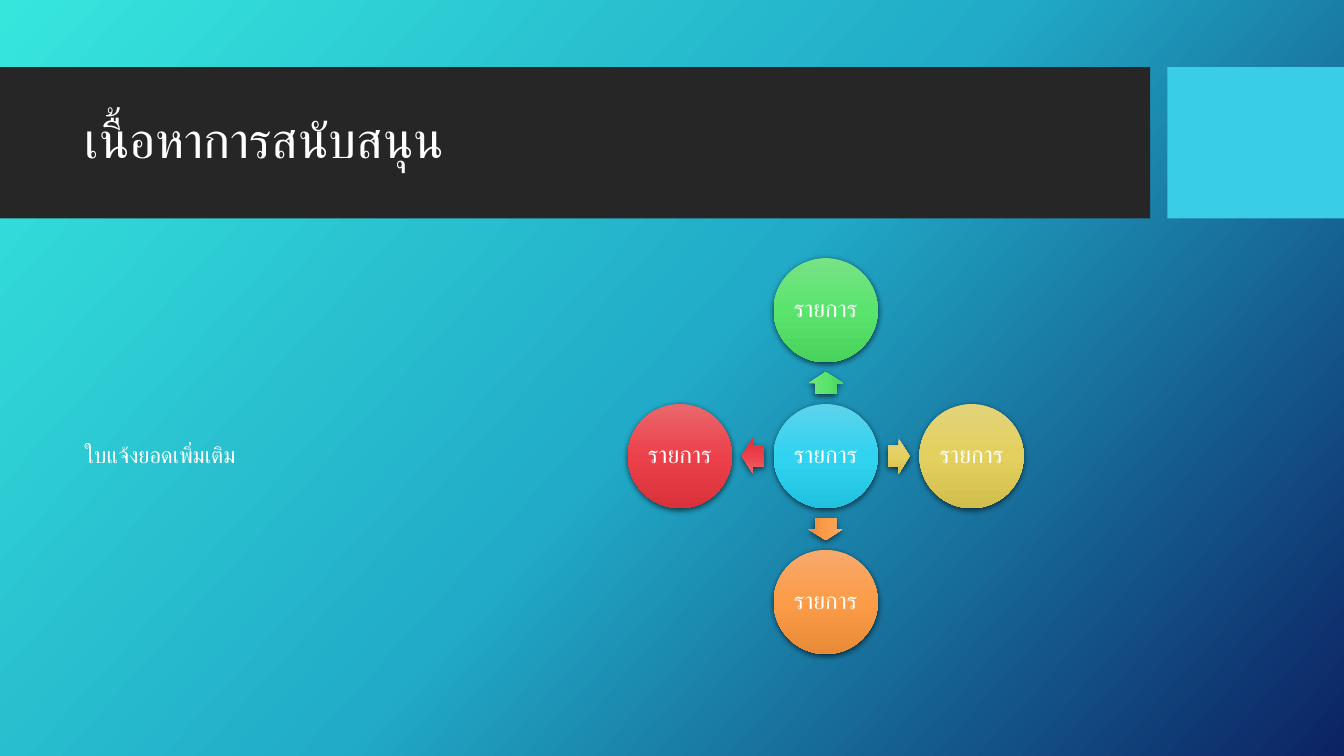
from copy import deepcopy
from math import cos, radians, sin

from lxml.etree import SubElement
from pptx import Presentation
from pptx.dml.color import RGBColor
from pptx.enum.shapes import MSO_SHAPE
from pptx.enum.text import MSO_ANCHOR, MSO_AUTO_SIZE, PP_ALIGN
from pptx.oxml.ns import qn
from pptx.util import Pt

COLOURS = {
    "band": "262626",
    "accent": "39CDE7",
    "text": "FFFFFF",
    "shadow": "000000",
    "background": ["36E6DD", "21ABC8", "0C2263"],
    "centre": ["5DD3EB", "30D3F0", "21C2DF"],
    "top": ["77E385", "5AE46E", "49D25C"],
    "right": ["E2D37A", "E3D05E", "D1BE4D"],
    "bottom": ["F7A96C", "FC9C48", "E98B36"],
    "left": ["E9676C", "EC414A", "DA313A"],
}


def write(shape, text, size, align=PP_ALIGN.LEFT, inset=None):
    frame = shape.text_frame
    frame.word_wrap = True
    frame.auto_size = MSO_AUTO_SIZE.NONE
    frame.vertical_anchor = MSO_ANCHOR.MIDDLE
    if inset is not None:
        frame.margin_left = frame.margin_right = Pt(inset)
        frame.margin_top = frame.margin_bottom = Pt(inset)
    para = frame.paragraphs[0]
    para.alignment = align
    para.line_spacing = 0.9
    para.space_before = Pt(0)
    span = para.add_run()
    span.text = text
    span.font.name = "Lato"
    span.font.size = Pt(size)
    span.font.color.rgb = RGBColor.from_string(COLOURS["text"])


def paint(fill, element, colours, angle):
    fill.gradient()
    fill.gradient_angle = 360 - angle
    stop_list = next(element.iter(qn("a:gsLst")))
    stop_list.append(deepcopy(stop_list[0]))
    for stop, colour, position in zip(fill.gradient_stops, colours, (0, 0.5, 1)):
        stop.color.rgb = RGBColor.from_string(colour)
        stop.position = position


deck = Presentation()
deck.slide_width, deck.slide_height = Pt(960), Pt(540)
page = deck.slides.add_slide(deck.slide_layouts[1])
paint(page.background.fill, page.element, COLOURS["background"], 42)

for left, width, colour in ((0, 821.5, "band"), (833.8, 126.2, "accent")):
    bar = page.shapes.add_shape(MSO_SHAPE.RECTANGLE, Pt(left), Pt(48), Pt(width), Pt(108))
    bar.shadow.inherit = False
    bar.fill.solid()
    bar.fill.fore_color.rgb = RGBColor.from_string(COLOURS[colour])
    bar.line.fill.background()

title, body = page.shapes.title, page.placeholders[1]
for holder, left, top, width, height in (
    (title, 53.3, 59, 756.7, 85),
    (body, 53.3, 184, 298, 283.7),
):
    holder.left, holder.top = Pt(left), Pt(top)
    holder.width, holder.height = Pt(width), Pt(height)
    page.shapes.element.append(holder.element)

write(title, "เนื้อหาการสนับสนุน", 36)
body_format = body.text_frame.paragraphs[0]._p.get_or_add_pPr()
body_format.set("marL", "0")
body_format.set("indent", "0")
SubElement(body_format, qn("a:buNone"))
write(body, "ใบแจ้งยอดเพิ่มเติม", 16)

centre_x, centre_y = 589.8, 325.8
diameter, pitch = 74.4, 104.2
arrow_length, arrow_width = 15.8, 25.2

pieces = [("centre", MSO_SHAPE.OVAL, 0, 0, diameter, diameter)]
for name, angle in (("top", 270), ("right", 0), ("bottom", 90), ("left", 180)):
    pieces.append((name, MSO_SHAPE.RIGHT_ARROW, angle, pitch / 2, arrow_length, arrow_width))
    pieces.append((name, MSO_SHAPE.OVAL, angle, pitch, diameter, diameter))

for name, kind, angle, distance, width, height in pieces:
    left = centre_x + distance * cos(radians(angle)) - width / 2
    top = centre_y + distance * sin(radians(angle)) - height / 2
    piece = page.shapes.add_shape(kind, Pt(left), Pt(top), Pt(width), Pt(height))
    paint(piece.fill, piece.element, COLOURS[name], 90)
    piece.line.fill.background()
    piece.shadow.inherit = False
    effects = piece.element.spPr.find(qn("a:effectLst"))
    shadow = SubElement(
        effects, qn("a:outerShdw"), blurRad="57150", dist="19050", dir="5400000", algn="ctr", rotWithShape="0"
    )
    shade = SubElement(shadow, qn("a:srgbClr"), val=COLOURS["shadow"])
    SubElement(shade, qn("a:alpha"), val="63000")
    if kind == MSO_SHAPE.RIGHT_ARROW:
        piece.rotation = angle
        piece.adjustments[0], piece.adjustments[1] = 0.6, 0.5
    else:
        write(piece, "รายการ", 17, align=PP_ALIGN.CENTER, inset=1.5)

deck.save("out.pptx")
